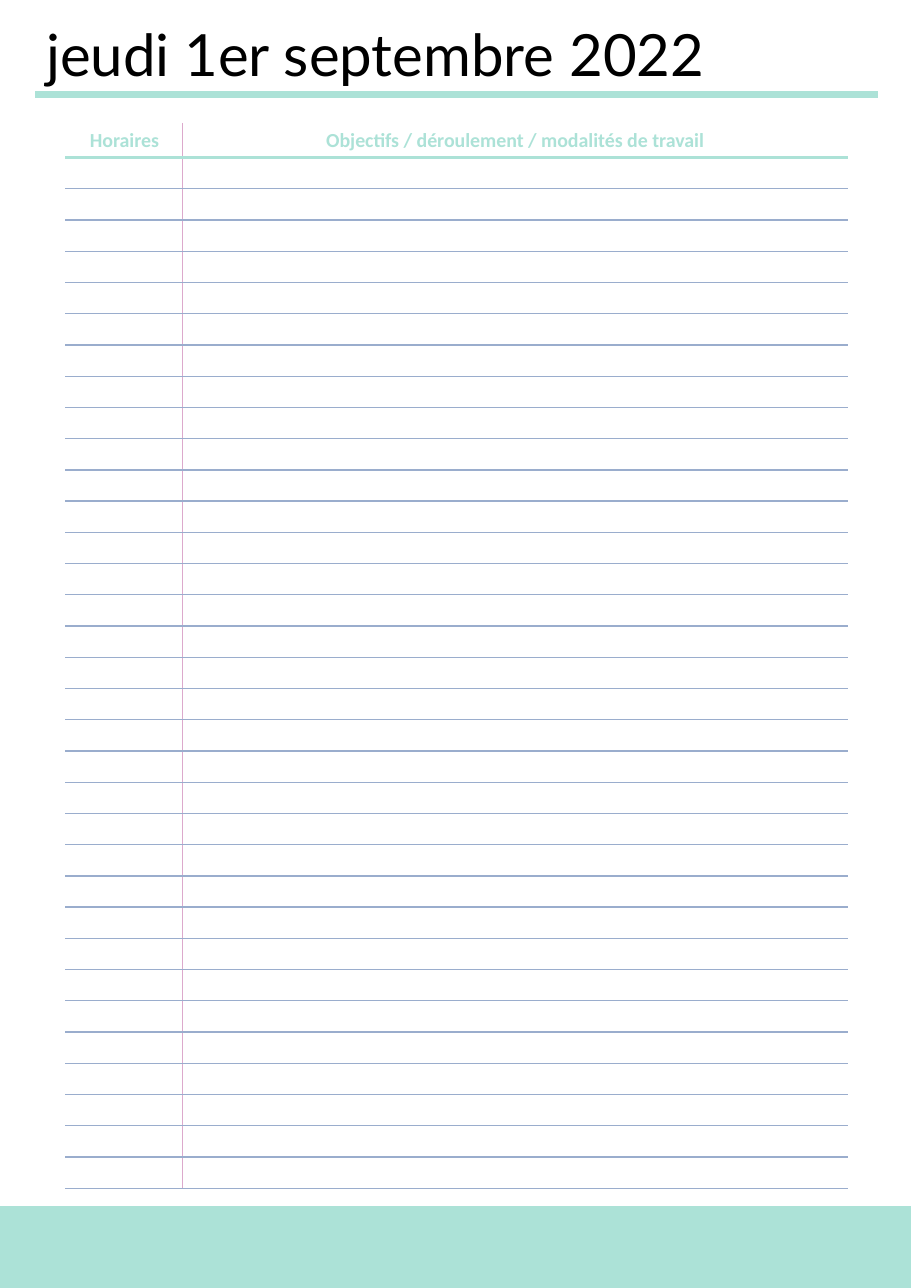
"""Build a ruled daily planner page."""
from lxml.etree import SubElement
from pptx import Presentation
from pptx.dml.color import RGBColor
from pptx.enum.shapes import MSO_CONNECTOR, MSO_SHAPE
from pptx.enum.text import MSO_ANCHOR, MSO_AUTO_SIZE, PP_ALIGN
from pptx.oxml.ns import qn
from pptx.util import Inches, Pt

WIDTH, HEIGHT = 8.27, 11.69
MINT, BLUE, PINK, WHITE, BLACK = "ACE2D7", "9AADCD", "DCA9CC", "FFFFFF", "000000"
HEADERS = ["Horaires", "Objectifs / déroulement / modalités de travail"]
COLUMNS = [1.06, 6.03]
HEADER_HEIGHT, TABLE_HEIGHT, LINES = 0.31, 9.67, 33


def rgb(color):
    """Turn a hex string into a colour."""
    return RGBColor.from_string(color)


def add_run(p, text, size, font, color, bold=False):
    """Add one formatted run to a paragraph."""
    r = p.add_run()
    r.text = text
    r.font.size, r.font.name, r.font.bold = Pt(size), font, bold
    r.font.color.rgb = rgb(color)


def add_rule(s, left, right, y, color, width):
    """Draw a horizontal rule."""
    line = s.shapes.add_connector(MSO_CONNECTOR.STRAIGHT, Inches(left), Inches(y),
                                  Inches(right), Inches(y))
    line.line.color.rgb = rgb(color)
    line.line.width = Pt(width)
    SubElement(line._element.spPr, qn("a:effectLst"))


def add_band(s, top, color):
    """Fill the foot of the page from top down."""
    sp = s.shapes.add_shape(MSO_SHAPE.RECTANGLE, 0, Inches(top), Inches(WIDTH),
                            Inches(HEIGHT - top))
    sp.shadow.inherit = False
    sp.fill.solid()
    sp.fill.fore_color.rgb = rgb(color)
    sp.line.color.rgb = rgb(color)
    sp.line.width = Pt(1)


def add_title(s, text):
    """Write the date at the top of the page."""
    tf = s.shapes.add_textbox(Inches(0.32), Inches(0.12), Inches(7.64), Inches(0.74)).text_frame
    tf.word_wrap = True
    tf.auto_size = MSO_AUTO_SIZE.SHAPE_TO_FIT_TEXT
    add_run(tf.paragraphs[0], text, 38, "Lato", BLACK)


def set_borders(cell, borders):
    """Set cell borders from (side, colour, width) triples in L, R, T, B order."""
    tc_pr = cell._tc.get_or_add_tcPr()
    for i, (side, color, width) in enumerate(borders):
        ln = tc_pr.makeelement(qn(f"a:ln{side}"), {"w": str(Pt(width))})
        SubElement(SubElement(ln, qn("a:solidFill")), qn("a:srgbClr"), val=color)
        tc_pr.insert(i, ln)


def style_cell(cell, row, col):
    """Give a cell its fill, margins and ruled borders."""
    cell.fill.solid()
    cell.fill.fore_color.rgb = rgb(WHITE)
    cell.margin_top = cell.margin_bottom = 0
    cell.vertical_anchor = MSO_ANCHOR.MIDDLE
    header_rule = (MINT, 2.25)
    top = {0: (WHITE, 1), 1: header_rule}.get(row, (BLUE, 1))
    bottom = header_rule if row == 0 else (BLUE, 1)
    left, right = (WHITE, PINK) if col == 0 else (PINK, WHITE)
    set_borders(cell, [("L", left, 1), ("R", right, 1), ("T", *top), ("B", *bottom)])


def add_planner(s):
    """Add the planner table with a header and empty ruled lines."""
    table = s.shapes.add_table(LINES + 1, len(COLUMNS), Inches(0.6), Inches(1.12),
                               Inches(sum(COLUMNS)), Inches(TABLE_HEIGHT)).table
    for column, width in zip(table.columns, COLUMNS):
        column.width = Inches(width)
    line_height = (TABLE_HEIGHT - HEADER_HEIGHT) / LINES
    for i, row in enumerate(table.rows):
        row.height = Inches(line_height if i else HEADER_HEIGHT)
        for j, cell in enumerate(row.cells):
            style_cell(cell, i, j)
            p = cell.text_frame.paragraphs[0]
            if i == 0:
                p.alignment = PP_ALIGN.CENTER
                add_run(p, HEADERS[j], 13, "Calibri", MINT, True)
            else:
                SubElement(p._p, qn("a:endParaRPr"), sz="1200")


def main():
    """Build and save the page."""
    prs = Presentation()
    prs.slide_width, prs.slide_height = Inches(WIDTH), Inches(HEIGHT)
    s = prs.slides.add_slide(prs.slide_layouts[6])
    add_rule(s, 0.32, 7.97, 0.86, MINT, 4.75)
    add_band(s, 10.95, MINT)
    add_title(s, "jeudi 1er septembre 2022")
    add_planner(s)
    prs.save("out.pptx")


if __name__ == "__main__":
    main()
